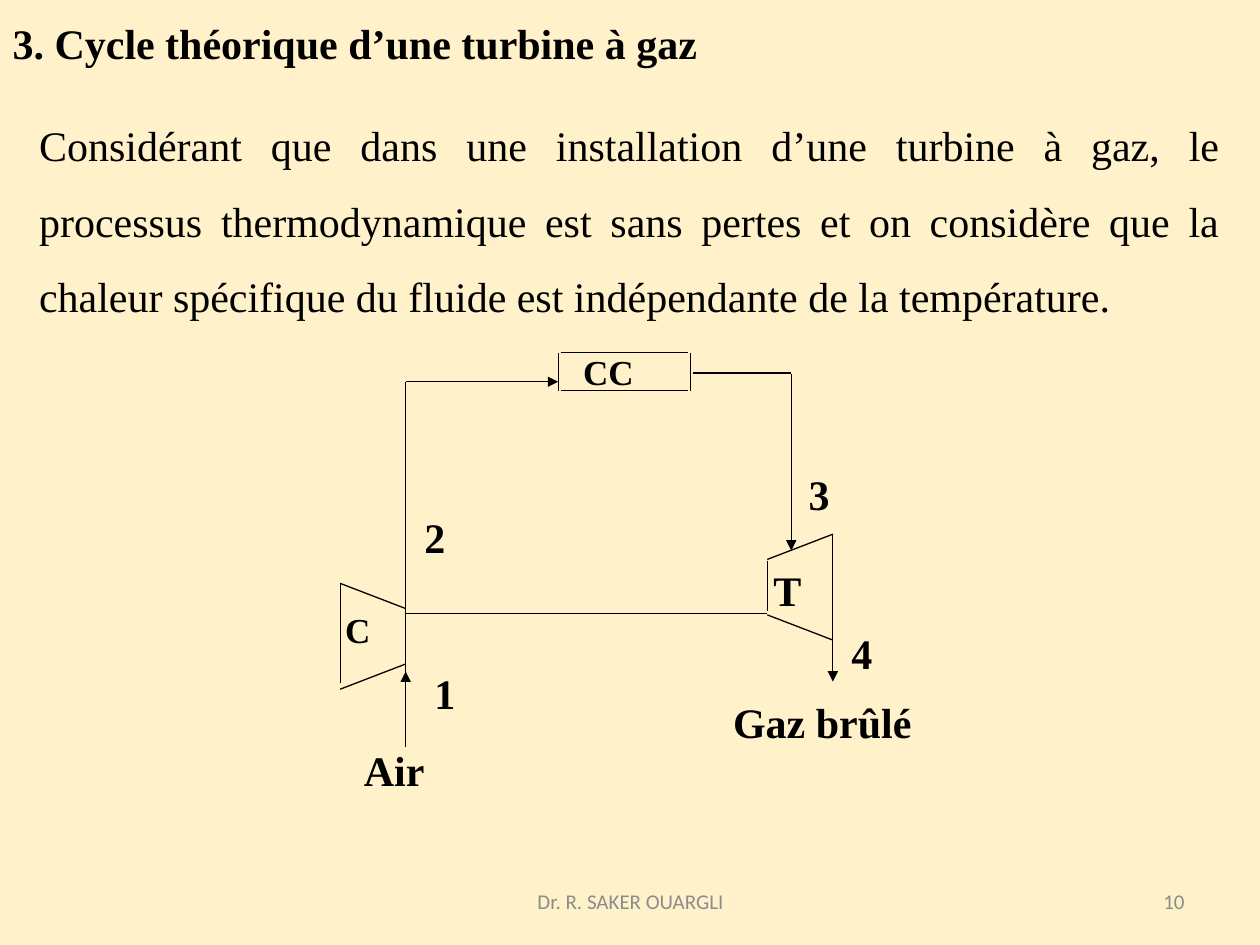
from dataclasses import dataclass

from lxml import etree
from pptx import Presentation
from pptx.dml.color import RGBColor
from pptx.enum import shapes, text
from pptx.oxml import ns
from pptx.util import Inches, Pt


@dataclass(frozen=True)
class Theme:
    background: str = "FFF2CB"
    ink: str = "000000"
    muted: str = "8C8C8C"
    serif: str = "Times New Roman"
    sans: str = "Calibri"
    large: int = 24
    medium: int = 20
    small: int = 12
    line: float = 0.75


THEME = Theme()


def write(sp, words, size, font=THEME.serif, color=THEME.ink, bold=False,
          align=text.PP_ALIGN.LEFT, anchor=text.MSO_ANCHOR.TOP):
    tf = sp.text_frame
    tf.text = words
    tf.word_wrap = True
    tf.auto_size = text.MSO_AUTO_SIZE.NONE
    tf.vertical_anchor = anchor
    p = tf.paragraphs[0]
    p.alignment = align
    f = p.runs[0].font
    f.name, f.size, f.bold = font, Pt(size), bold
    f.color.rgb = RGBColor.from_string(color)
    return p


def place(sp, box):
    sp.left, sp.top, sp.width, sp.height = (Inches(v) for v in box)


def add_label(s, box, words, size, **style):
    sp = s.shapes.add_textbox(*(Inches(v) for v in box))
    write(sp, words, size, **style)


def add_line(s, x1, y1, x2, y2, arrow=False):
    c = s.shapes.add_connector(shapes.MSO_CONNECTOR.STRAIGHT,
                               Inches(x1), Inches(y1), Inches(x2), Inches(y2))
    c.line.color.rgb = RGBColor.from_string(THEME.ink)
    c.line.width = Pt(THEME.line)
    if arrow:
        etree.SubElement(c.line._get_or_add_ln(), ns.qn("a:tailEnd"), type="triangle")
    etree.SubElement(c._element.spPr, ns.qn("a:effectLst"))


def add_heading(s, box):
    place(s.shapes.title, box)
    write(s.shapes.title, "3. Cycle théorique d’une turbine à gaz", THEME.large,
          bold=True, anchor=text.MSO_ANCHOR.MIDDLE)


def add_body(s, box):
    sp = s.placeholders[1]
    place(sp, box)
    p = write(sp, "Considérant que dans une installation d’une turbine à gaz, le "
              "processus thermodynamique est sans pertes et on considère que la "
              "chaleur spécifique du fluide est indépendante de la température.",
              THEME.large, align=text.PP_ALIGN.JUSTIFY)
    p.line_spacing = 1.5


def add_chamber(s, x, y, w, h):
    gap = 0.02
    for edge_y in (y, y + h):
        add_line(s, x + gap, edge_y, x + w - gap, edge_y)
    for edge_x in (x, x + w):
        add_line(s, edge_x, y, edge_x, y + h)


def add_rotor(s, wide_x, narrow_x, y):
    """Flared outline, open on its narrow side."""
    height, taper = 0.84, 0.2
    add_line(s, wide_x, y, narrow_x, y + taper)
    add_line(s, wide_x, y + height, narrow_x, y + height - taper)
    add_line(s, wide_x, y, wide_x, y + height - 0.05)


def add_cycle(s, x, y):
    comp_out, turb_in, turb_out = x + 0.52, x + 3.39, x + 3.91
    feed = x + 3.58
    chamber, chamber_w = x + 1.73, 1.05
    shaft = y + 2.07

    # Components
    add_chamber(s, chamber, y, chamber_w, 0.3)
    add_rotor(s, x, comp_out, y + 1.83)
    add_rotor(s, turb_out, turb_in, y + 1.44)
    add_line(s, turb_in, y + 1.65, turb_in, y + 2.05)
    add_line(s, turb_in, shaft, comp_out, shaft)

    # Gas path: air, compressor, chamber, turbine, exhaust
    add_line(s, comp_out, y + 3.13, comp_out, y + 2.53, arrow=True)
    add_line(s, comp_out, y + 0.23, comp_out, y + 2.64)
    add_line(s, comp_out, y + 0.23, chamber, y + 0.23, arrow=True)
    add_line(s, chamber + chamber_w + 0.02, y + 0.16, feed, y + 0.16)
    add_line(s, feed, y + 0.17, feed, y + 1.57, arrow=True)
    add_line(s, turb_out, y + 2.21, turb_out, y + 2.61, arrow=True)

    # Labels: offset, size of box, words, type size
    for dx, dy, w, h, words, size in (
            (3.34, 1.63, 0.78, 0.4, "T", THEME.large),
            (1.83, -0.07, 0.95, 0.4, "CC", THEME.medium),
            (-0.06, 1.98, 0.78, 0.4, "C", THEME.medium),
            (3.02, 2.68, 1.97, 0.6, "Gaz brûlé", THEME.large),
            (0.09, 3.06, 0.97, 0.6, "Air", THEME.large),
            (0.65, 2.45, 0.97, 0.6, "1", THEME.large),
            (0.57, 1.21, 0.97, 0.6, "2", THEME.large),
            (3.62, 0.87, 0.47, 0.55, "3", THEME.large),
            (3.96, 2.13, 0.97, 0.6, "4", THEME.large)):
        add_label(s, (x + dx, y + dy, w, h), words, size, bold=True)


def add_footer(s, y, h):
    for x, w, words, align in (
            (3.42, 3.17, "Dr. R. SAKER OUARGLI", text.PP_ALIGN.CENTER),
            (7.17, 2.33, "10", text.PP_ALIGN.RIGHT)):
        add_label(s, (x, y, w, h), words, THEME.small, font=THEME.sans,
                  color=THEME.muted, align=align, anchor=text.MSO_ANCHOR.MIDDLE)


def main():
    prs = Presentation()
    prs.slide_width, prs.slide_height = Inches(10), Inches(7.5)
    s = prs.slides.add_slide(prs.slide_layouts[0])
    s.background.fill.solid()
    s.background.fill.fore_color.rgb = RGBColor.from_string(THEME.background)
    add_heading(s, (0, 0, 5.94, 0.68))
    add_body(s, (0.21, 0.7, 9.57, 1.92))
    add_cycle(s, 2.7, 2.8)
    add_footer(s, 6.95, 0.4)
    prs.save("out.pptx")


if __name__ == "__main__":
    main()
